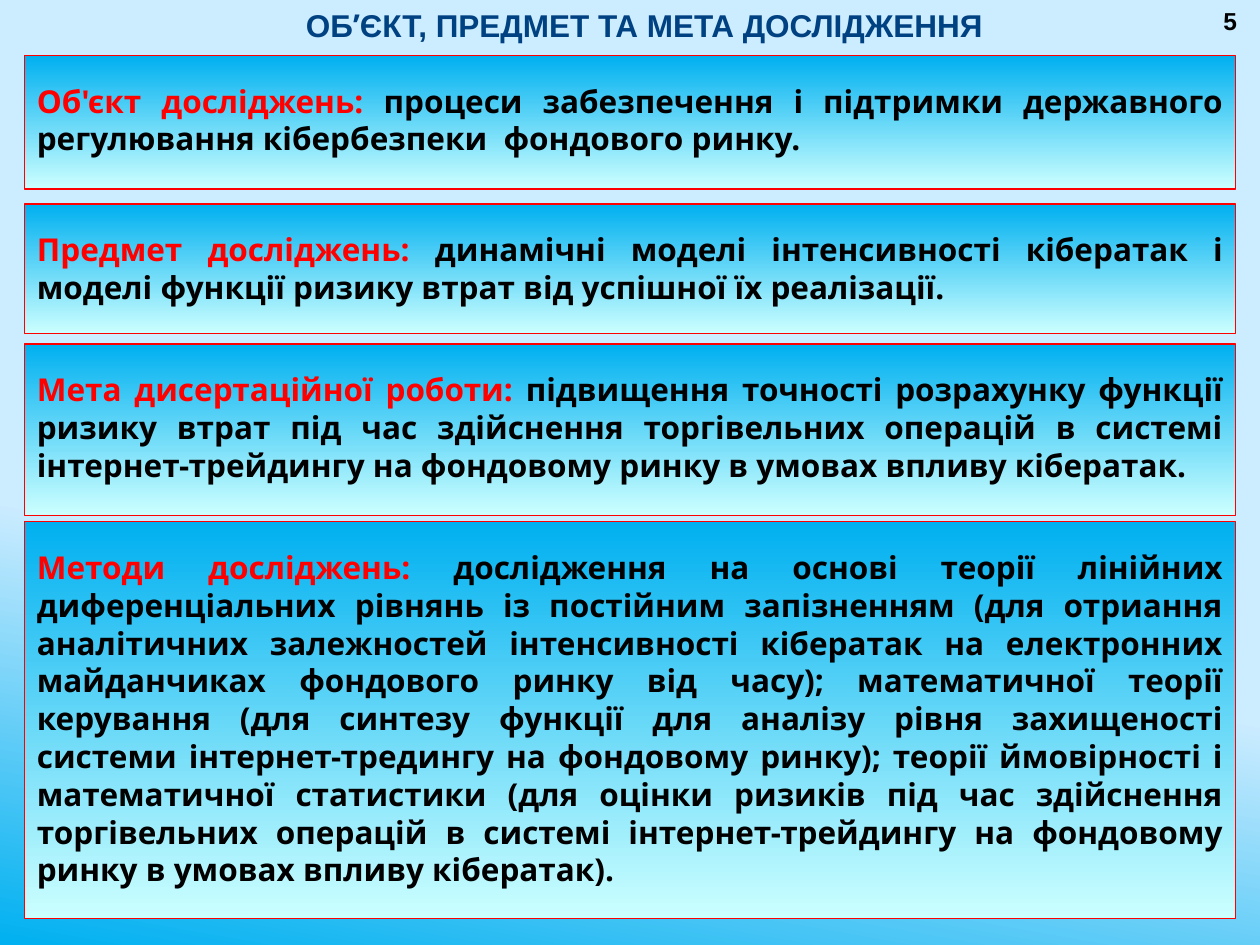
"""Build the slide on the object, subject, aim and methods of the research."""
from pptx import Presentation
from pptx.dml.color import RGBColor
from pptx.enum.shapes import MSO_SHAPE
from pptx.enum.text import MSO_ANCHOR, PP_ALIGN
from pptx.util import Pt

HUES = {"navy": "004182", "red": "FF0000", "black": "000000",
        "blue": "00B0F0", "pale": "CCFFFF", "sky": "CCECFF"}


def shade(fill, start, end, angle, stop=1):
    fill.gradient()
    fill.gradient_angle = angle
    for mark, hue, spot in zip(fill.gradient_stops, (start, end), (0, stop)):
        mark.color.rgb = RGBColor.from_string(HUES[hue])
        mark.position = spot


def write(frame, runs, align, **setup):
    base = {"word_wrap": True, "vertical_anchor": MSO_ANCHOR.TOP}
    for key, value in (base | setup).items():
        setattr(frame, key, value)
    para = frame.paragraphs[0]
    para.alignment = align
    for text, face, size, hue in runs:
        run = para.add_run()
        run.text = text
        for key, value in {"name": face, "size": Pt(size), "bold": True}.items():
            setattr(run.font, key, value)
        run.font.color.rgb = RGBColor.from_string(HUES[hue])
    return para


deck = Presentation()
deck.slide_width, deck.slide_height = Pt(720), Pt(540)
slide = deck.slides.add_slide(deck.slide_layouts[5])
shade(slide.background.fill, "blue", "sky", 80, 0.38)

title = slide.shapes.title
spot = {"left": 106.5, "top": 0, "width": 523.5, "height": 29}
for key, value in spot.items():
    setattr(title, key, Pt(value))
write(title.text_frame, [("ОБ", "Arial", 18, "navy"),
                         ("’", "Noto Sans", 18, "navy"),
                         ("ЄКТ, ПРЕДМЕТ ТА МЕТА ДОСЛІДЖЕННЯ", "Arial", 18, "navy")],
      PP_ALIGN.CENTER)

parts = [
    (31.7, 76.3, "Об'єкт досліджень: ",
     "процеси забезпечення і підтримки державного регулювання "
     "кібербезпеки  фондового ринку."),
    (116.6, 74.2, "Предмет досліджень: ",
     "динамічні моделі інтенсивності кібератак і моделі функції ризику "
     "втрат від успішної їх реалізації."),
    (196.6, 97.9, "Мета дисертаційної роботи: ",
     "підвищення точності розрахунку функції ризику втрат під час здійснення "
     "торгівельних операцій в системі інтернет-трейдингу на фондовому ринку "
     "в умовах впливу кібератак."),
    (298.1, 226.8, "Методи досліджень: ",
     "дослідження на основі теорії лінійних диференціальних рівнянь із "
     "постійним запізненням (для отриання аналітичних залежностей "
     "інтенсивності кібератак на електронних майданчиках фондового ринку "
     "від часу); математичної теорії керування (для синтезу функції для "
     "аналізу рівня захищеності системи інтернет-тредингу на фондовому "
     "ринку); теорії ймовірності і математичної статистики (для оцінки "
     "ризиків під час здійснення торгівельних операцій в системі "
     "інтернет-трейдингу на фондовому ринку в умовах впливу кібератак)."),
]
for top, height, head, body in parts:
    box = slide.shapes.add_shape(MSO_SHAPE.RECTANGLE, Pt(14), Pt(top), Pt(692), Pt(height))
    box.shadow.inherit = False
    shade(box.fill, "blue", "pale", 270)
    box.line.color.rgb = RGBColor.from_string(HUES["red"])
    box.line.width = Pt(0.75)
    para = write(box.text_frame, [(head, "Noto Sans", 18, "red"),
                                  (body, "Noto Sans", 18, "black")],
                 PP_ALIGN.JUSTIFY, margin_top=Pt(15), margin_bottom=Pt(15))
    para.line_spacing = Pt(21.6)

page = slide.shapes.add_textbox(Pt(686), Pt(0), Pt(34), Pt(24))
write(page.text_frame, [("5", "Arial", 14, "black")], PP_ALIGN.CENTER)

deck.save("out.pptx")
